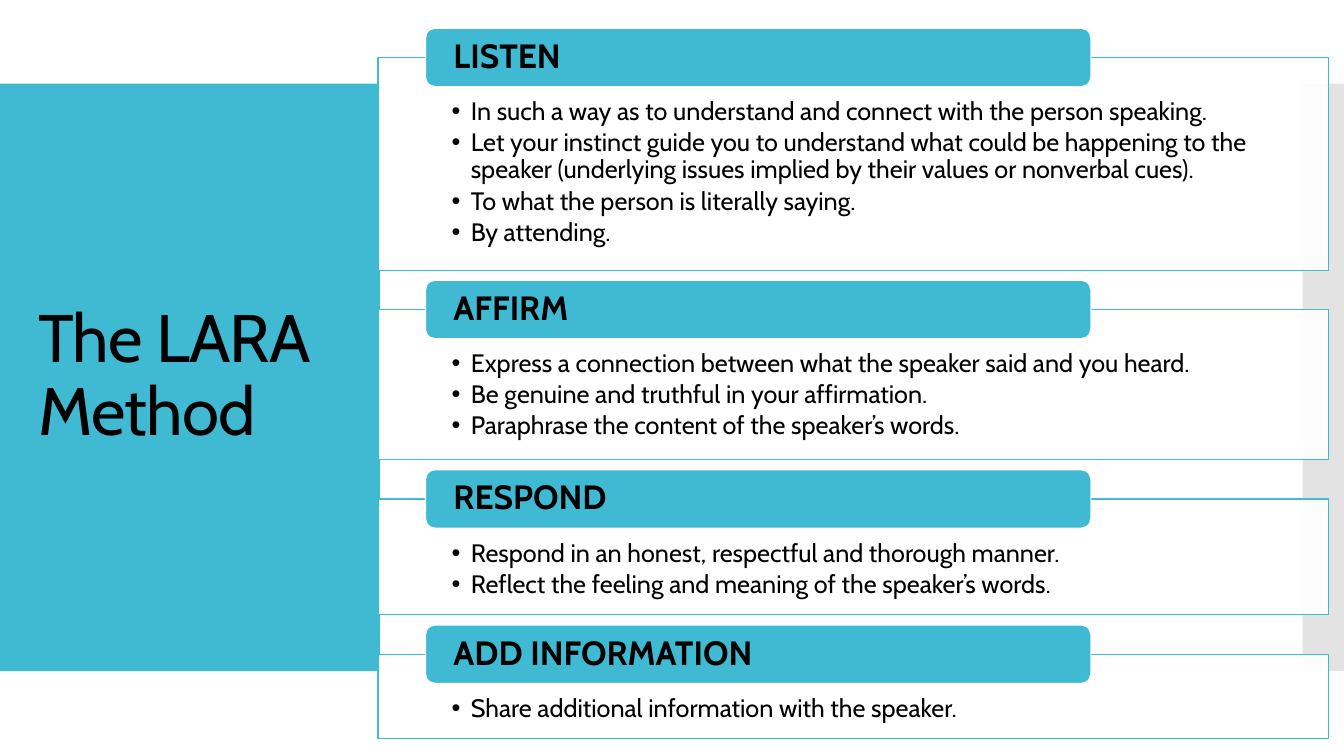
import pptx
import pptx.util
import pptx.dml.color
import pptx.enum.shapes
import pptx.enum.text
import pptx.oxml
import pptx.oxml.ns

Inches, Pt = pptx.util.Inches, pptx.util.Pt
SHAPES = pptx.enum.shapes.MSO_SHAPE
ANCHORS = pptx.enum.text.MSO_ANCHOR

TITLE = "The LARA Method"
STEPS = [  # heading, panel height, points
    ("LISTEN", 2.11, [
        "In such a way as to understand and connect with the person speaking.",
        "Let your instinct guide you to understand what could be happening to the "
        "speaker (underlying issues implied by their values or nonverbal cues).",
        "To what the person is literally saying.",
        "By attending.",
    ]),
    ("AFFIRM", 1.49, [
        "Express a connection between what the speaker said and you heard.",
        "Be genuine and truthful in your affirmation.",
        "Paraphrase the content of the speaker’s words.",
    ]),
    ("RESPOND", 1.15, [
        "Respond in an honest, respectful and thorough manner.",
        "Reflect the feeling and meaning of the speaker’s words.",
    ]),
    ("ADD INFORMATION", 0.84, ["Share additional information with the speaker."]),
]

COLORS = {"teal": "40BAD2", "gray": "C8C8C8", "white": "FFFFFF", "text": "000000"}
FONT = "Cabin"
PANEL_LEFT, PANEL_WIDTH, PANEL_TOP, PANEL_GAP = 3.75, 9.43, 0.57, 0.39
HEADER_LEFT, HEADER_WIDTH, HEADER_HEIGHT = 4.22, 6.6, 0.58
BULLET_INDENT = 0.19

TITLE_FRAME = {"vertical_anchor": ANCHORS.MIDDLE, "word_wrap": True,
               "auto_size": pptx.enum.text.MSO_AUTO_SIZE.NONE}
HEADER_FRAME = {"vertical_anchor": ANCHORS.MIDDLE, "word_wrap": True,
                "margin_left": Inches(0.25), "margin_right": Inches(0.25),
                "margin_top": 0, "margin_bottom": 0}
PANEL_FRAME = {"vertical_anchor": ANCHORS.TOP, "word_wrap": True,
               "margin_left": Inches(0.73), "margin_right": Inches(0.73),
               "margin_top": Inches(0.41), "margin_bottom": Inches(0.14)}
TITLE_FONT = {"name": FONT, "size": Pt(48), "bold": False}
HEADER_FONT = {"name": FONT, "size": Pt(24), "bold": True}
PANEL_FONT = {"name": FONT, "size": Pt(18), "bold": False}
PARAGRAPH = {"alignment": pptx.enum.text.PP_ALIGN.LEFT, "line_spacing": 0.9,
             "space_before": Pt(0)}


def rgb(name):
    return pptx.dml.color.RGBColor.from_string(COLORS[name])


def apply(target, values):
    for key, value in values.items():
        setattr(target, key, value)


def add_child(parent, tag, **attributes):
    child = pptx.oxml.parse_xml(f"<{tag} {pptx.oxml.ns.nsdecls('a')}/>")
    for key, value in attributes.items():
        child.set(key, value)
    parent.append(child)


def add_block(page, kind, left, top, width, height, fill, line=None, opacity=100):
    block = page.shapes.add_shape(kind, *map(Inches, (left, top, width, height)))
    block.shadow.inherit = False
    block.fill.solid()
    block.fill.fore_color.rgb = rgb(fill)
    if opacity < 100:
        color = block.fill._xPr.solidFill.srgbClr
        add_child(color, "a:alpha", val=str(opacity * 1000))
    if line:
        block.line.color.rgb = rgb(line)
        block.line.width = Pt(0.85)
    else:
        block.line.fill.background()
    return block


def write(box, lines, frame_format, font_format, space_after=0):
    frame = box.text_frame
    apply(frame, frame_format)
    frame.text = "\n".join(lines)
    for para in frame.paragraphs:
        apply(para, PARAGRAPH)
        para.space_after = Pt(space_after)
        for span in para.runs:
            apply(span.font, font_format)
            span.font.color.rgb = rgb("text")


def add_bullets(box):
    indent = Inches(BULLET_INDENT)
    for para in box.text_frame.paragraphs:
        properties = para._p.get_or_add_pPr()
        properties.set("marL", str(indent))
        properties.set("indent", str(-indent))
        add_child(properties, "a:buFont", typeface="Arial")
        add_child(properties, "a:buChar", char="•")


def add_title(page):
    title = page.shapes.title
    apply(title, {"left": Inches(0.28), "top": Inches(1.23),
                  "width": Inches(3.22), "height": Inches(5.03)})
    write(title, [TITLE], TITLE_FRAME, TITLE_FONT)
    for span in title.text_frame.paragraphs[0].runs:
        span.font._element.set("spc", "-60")


def add_step(page, top, heading, height, points):
    panel = add_block(page, SHAPES.RECTANGLE, PANEL_LEFT, top, PANEL_WIDTH, height,
                      "white", "teal", opacity=90)
    write(panel, points, PANEL_FRAME, PANEL_FONT, space_after=2.8)
    add_bullets(panel)
    header = add_block(page, SHAPES.ROUNDED_RECTANGLE, HEADER_LEFT,
                       top - HEADER_HEIGHT / 2, HEADER_WIDTH, HEADER_HEIGHT,
                       "teal", "white")
    write(header, [heading], HEADER_FRAME, HEADER_FONT)


def main():
    deck = pptx.Presentation()
    deck.slide_width, deck.slide_height = Inches(13.33), Inches(7.5)
    page = deck.slides.add_slide(deck.slide_layouts.get_by_name("Title Only"))
    side = add_block(page, SHAPES.RECTANGLE, 0, 0.83, 3.77, 5.83, "teal")
    edge = add_block(page, SHAPES.RECTANGLE, 12.92, 0.83, 0.41, 5.83, "gray", opacity=50)
    for backdrop in (edge, side):
        page.shapes.title._element.addprevious(backdrop._element)
    add_title(page)
    top = PANEL_TOP
    for heading, height, points in STEPS:
        add_step(page, top, heading, height, points)
        top += height + PANEL_GAP
    deck.save("out.pptx")


if __name__ == "__main__":
    main()
